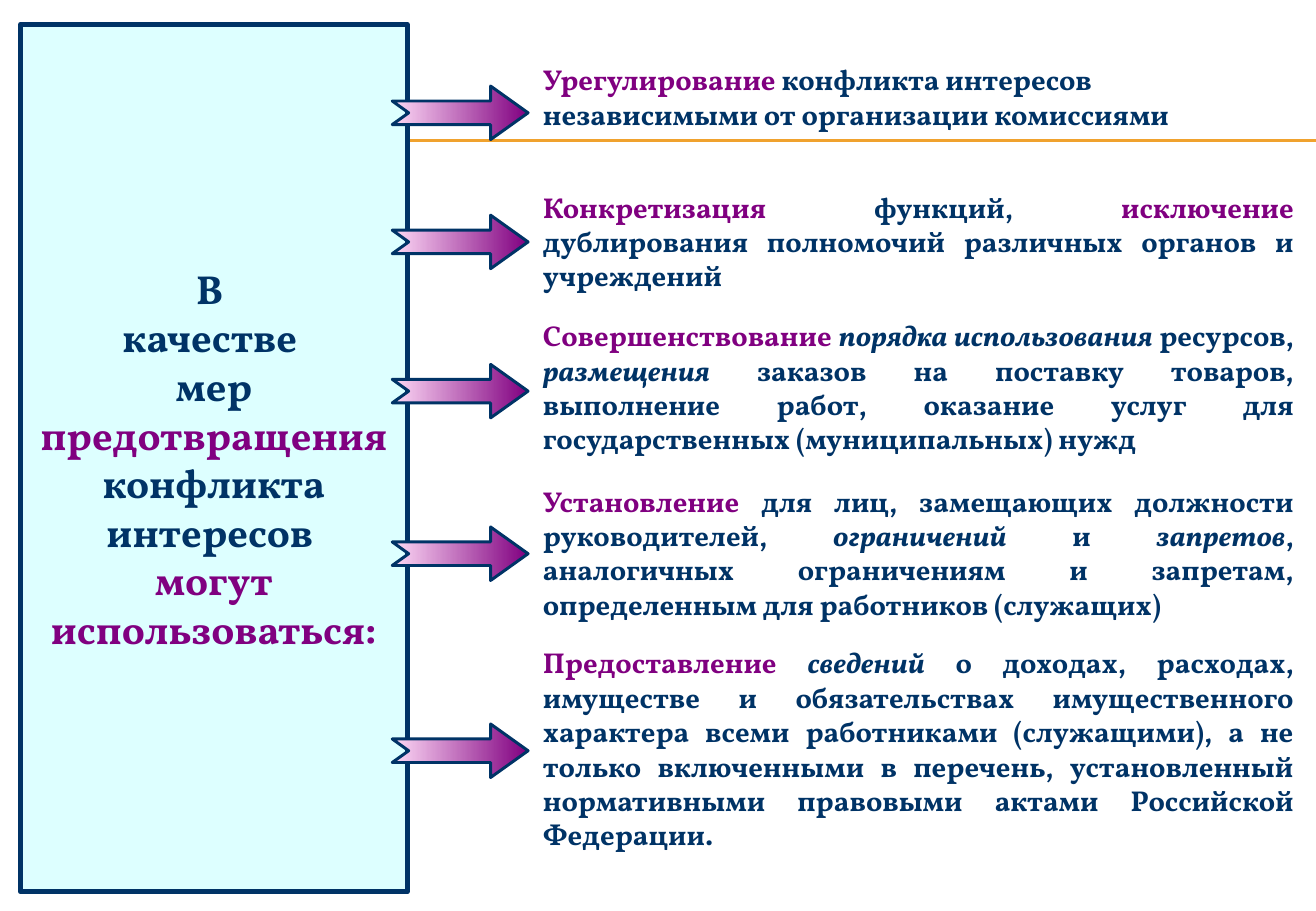
from dataclasses import dataclass

from lxml import etree
from pptx import Presentation
from pptx.dml.color import RGBColor
from pptx.enum.shapes import MSO_CONNECTOR, MSO_SHAPE
from pptx.enum.text import MSO_ANCHOR, MSO_AUTO_SIZE, PP_ALIGN
from pptx.oxml.ns import qn
from pptx.util import Cm, Pt

STRAIGHT = MSO_CONNECTOR.STRAIGHT
NOTCHED_ARROW = MSO_SHAPE.NOTCHED_RIGHT_ARROW
MIDDLE, TOP = MSO_ANCHOR.MIDDLE, MSO_ANCHOR.TOP
NO_AUTOFIT = MSO_AUTO_SIZE.NONE
LEFT, CENTER, JUSTIFY = PP_ALIGN.LEFT, PP_ALIGN.CENTER, PP_ALIGN.JUSTIFY
TITLE_ONLY = 5


@dataclass(frozen=True)
class Theme:
    """Colours, font and type sizes of the deck."""

    font: str = "Vollkorn"
    ink: RGBColor = RGBColor(0x00, 0x33, 0x66)
    accent: RGBColor = RGBColor(0x80, 0x00, 0x80)
    panel: RGBColor = RGBColor(0xDD, 0xFF, 0xFF)
    blush: RGBColor = RGBColor(0xFE, 0xDA, 0xF6)
    rule: RGBColor = RGBColor(0xF0, 0xA2, 0x2E)
    title_size: int = 24
    body_size: int = 17


TITLE = [
    ("В \nкачестве \nмер ", "ink"),
    ("предотвращения\n", "accent"),
    ("конфликта\nинтересов \n", "ink"),
    ("могут\nиспользоваться:", "accent"),
]

MEASURES = [
    (1.3, 1.8, 2, LEFT, [
        ("Урегулирование", "accent"),
        (" конфликта интересов независимыми от организации комиссиями", "ink"),
    ]),
    (3.96, 4.5, 3, JUSTIFY, [
        ("Конкретизация", "accent"),
        (" функций, ", "ink"),
        ("исключение ", "accent"),
        ("дублирования полномочий различных органов и учреждений", "ink"),
    ]),
    (6.65, 7.62, 4, JUSTIFY, [
        ("Совершенствование ", "accent"),
        ("порядка использования ", "italic"),
        ("ресурсов, ", "ink"),
        ("размещения", "italic"),
        (" заказов на поставку товаров, выполнение работ, оказание услуг "
         "для государственных (муниципальных) нужд", "ink"),
    ]),
    (10.11, 11.02, 4, JUSTIFY, [
        ("Установление", "accent"),
        (" для лиц, замещающих должности руководителей, ", "ink"),
        ("ограничений", "italic"),
        (" и ", "ink"),
        ("запретов", "italic"),
        (", аналогичных ограничениям и запретам, определенным для "
         "работников (служащих)", "ink"),
    ]),
    (13.49, 15.14, 6, JUSTIFY, [
        ("Предоставление ", "accent"),
        ("сведений", "italic"),
        (" о доходах, расходах, имуществе и обязательствах имущественного "
         "характера всеми работниками (служащими), а не только включенными "
         "в перечень, установленный нормативными правовыми актами "
         "Российской Федерации.", "ink"),
    ]),
]
LINE_HEIGHT = 0.73


class SlideBuilder:
    """Draws styled elements on the current slide."""

    def __init__(self, page, theme):
        """Keep the slide and its theme."""
        self.page = page
        self.theme = theme

    def fill_frame(self, frame, spans, size, align, anchor, left_inset=0):
        """Fill a text frame with one paragraph of styled spans."""
        frame.word_wrap = True
        frame.auto_size = NO_AUTOFIT
        frame.vertical_anchor = anchor
        frame.margin_left = Cm(left_inset)
        frame.margin_top = frame.margin_right = frame.margin_bottom = 0
        para = frame.paragraphs[0]
        para.alignment = align
        para.space_before = Pt(0)
        para.font.name = self.theme.font
        para.font.size = Pt(size)
        para.font.bold = True
        for text, style in spans:
            for index, line in enumerate(text.split("\n")):
                if index:
                    para.add_line_break()
                if line:
                    span = para.add_run()
                    span.text = line
                    accented = style == "accent"
                    span.font.color.rgb = self.theme.accent if accented else self.theme.ink
                    if style == "italic":
                        span.font.italic = True

    def title(self, spans, left, top, width, height):
        """Turn the title placeholder into the framed side panel."""
        panel = self.page.shapes.title
        panel.left, panel.top = Cm(left), Cm(top)
        panel.width, panel.height = Cm(width), Cm(height)
        panel.fill.solid()
        panel.fill.fore_color.rgb = self.theme.panel
        panel.line.color.rgb = self.theme.ink
        panel.line.width = Pt(3)
        self.fill_frame(panel.text_frame, spans, self.theme.title_size, CENTER, MIDDLE)

    def rule(self, left, right, top):
        """Draw a thin horizontal rule behind the title panel."""
        line = self.page.shapes.add_connector(STRAIGHT, Cm(left), Cm(top), Cm(right), Cm(top))
        line.line.color.rgb = self.theme.rule
        line.line.width = Pt(0.75)
        etree.SubElement(line.element.spPr, qn("a:effectLst"))
        self.page.shapes.title.element.addprevious(line.element)

    def arrow(self, left, top, width, height):
        """Draw a notched arrow with a gradient fill."""
        arrow = self.page.shapes.add_shape(
            NOTCHED_ARROW, Cm(left), Cm(top), Cm(width), Cm(height))
        arrow.shadow.inherit = False
        arrow.adjustments[0] = 0.44
        arrow.adjustments[1] = 0.7
        arrow.fill.gradient()
        arrow.fill.gradient_angle = 0
        for stop, colour in zip(arrow.fill.gradient_stops, (self.theme.blush, self.theme.accent)):
            stop.color.rgb = colour
        arrow.line.color.rgb = self.theme.ink
        arrow.line.width = Pt(1.75)

    def text(self, spans, align, left, top, width, height):
        """Add a text box with one measure."""
        box = self.page.shapes.add_textbox(Cm(left), Cm(top), Cm(width), Cm(height))
        self.fill_frame(box.text_frame, spans, self.theme.body_size, align, TOP, left_inset=0.3)


def main():
    """Build and save the deck."""
    deck = Presentation()
    deck.slide_width, deck.slide_height = Cm(27.51), Cm(19.05)
    page = deck.slides.add_slide(deck.slide_layouts[TITLE_ONLY])
    builder = SlideBuilder(page, Theme())
    builder.title(TITLE, 0.43, 0.51, 8.08, 18.14)
    for rule_top in (2.92, 2.95):
        builder.rule(1.55, 27.51, rule_top)
    for text_top, arrow_top, lines, align, spans in MEASURES:
        builder.arrow(8.2, arrow_top, 2.84, 1.12)
        builder.text(spans, align, 11.05, text_top, 16, lines * LINE_HEIGHT)
    deck.save("out.pptx")


if __name__ == "__main__":
    main()
